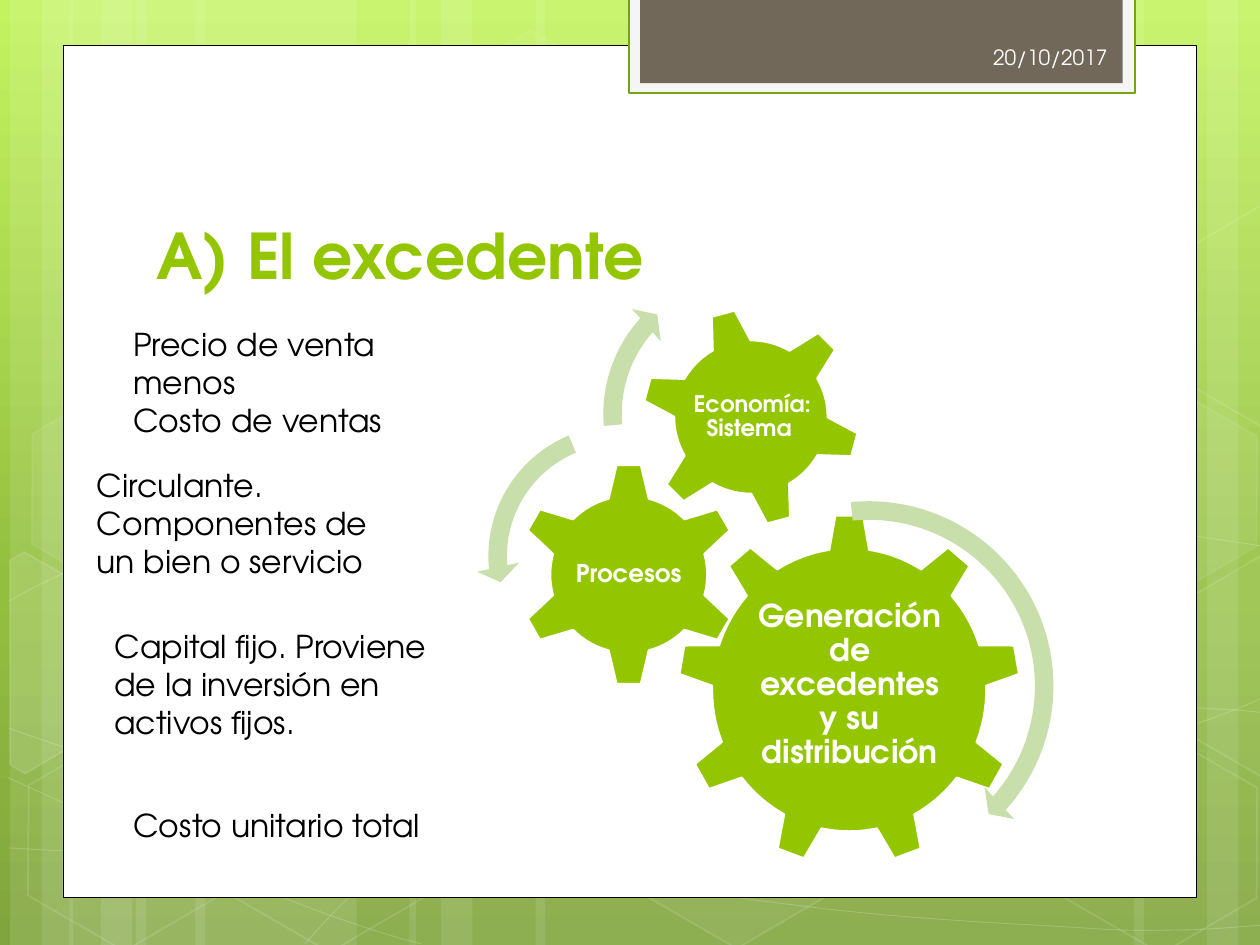
from copy import deepcopy
from dataclasses import dataclass
from lxml.etree import SubElement
from pptx import Presentation
from pptx.dml.color import RGBColor
from pptx.enum.shapes import MSO_SHAPE
from pptx.enum.text import MSO_ANCHOR, PP_ALIGN
from pptx.oxml.ns import qn
from pptx.util import Inches, Pt

FONT = "TeX Gyre Adventor"
WHITE = RGBColor(0xFF, 0xFF, 0xFF)
BLACK = RGBColor(0, 0, 0)
GREEN = RGBColor(0x94, 0xC6, 0x00)
PALE = RGBColor(0xC8, 0xDF, 0xAB)
EDGE = RGBColor(0x74, 0xA5, 0x10)
SMOKE = RGBColor(0xF5, 0xF5, 0xF5)
TAUPE = RGBColor(0x71, 0x68, 0x5A)
CREAM = RGBColor(0xFE, 0xFE, 0xFE)
SKY = [(0, RGBColor(0xC3, 0xF3, 0x5F)), (0.62, RGBColor(0x93, 0xBF, 0x3F)), (1, RGBColor(0x81, 0xA5, 0x3E))]
Box = tuple[float, float, float, float]
Points = list[tuple[float, float]]


@dataclass
class Gear:
    kind: MSO_SHAPE
    box: Box
    turn: float
    text: str
    label: Box
    size: float
    inset: float = 0.02


@dataclass
class Arrow:
    kind: MSO_SHAPE
    box: Box
    adjust: list[float]  # in hundredths


# Left and width of each light bar.
BARS = [(1.08, 1.75), (0.08, 0.5), (0.33, 0.83), (1.55, 1.75), (0.55, 0.5), (0.8, 0.83),
        (7.33, 1.75), (9.58, 0.5), (9, 0.83), (4.25, 3.08), (3.25, 0.5), (3.5, 0.83)]
# Each curve is a start point followed by triples of Bezier points.
CURVES = [
    [(0.07, 6.73), (0.61, 6.76), (1.15, 6.79), (1.9, 6.78), (2.65, 6.77), (3.58, 6.75), (4.58, 6.65),
     (5.58, 6.55), (7, 6.36), (7.92, 6.17), (8.83, 5.98), (9.77, 5.68), (10.07, 5.51)],
    [(0.07, 4.77), (0.36, 4.61), (0.65, 4.46), (1.21, 4.31), (1.78, 4.16), (2.59, 3.94), (3.47, 3.87),
     (4.36, 3.8), (5.44, 3.79), (6.54, 3.87), (7.64, 3.95), (9.47, 4.26), (10.07, 4.34)],
    [(0.06, 6.17), (1.27, 6.72), (2.47, 7.27), (3.34, 7.49)],
    [(0.07, 5.78), (0.38, 5.89), (0.7, 6), (1.28, 6.16), (1.86, 6.31), (2.73, 6.56), (3.57, 6.73),
     (4.4, 6.9), (5.45, 7.08), (6.28, 7.18), (7.11, 7.29), (8, 7.33), (8.53, 7.36),
     (9.05, 7.4), (9.19, 7.38), (9.45, 7.38), (9.71, 7.37), (9.89, 7.35), (10.07, 7.34)],
    [(2.42, 7.49), (2.6, 7.29), (2.78, 7.09), (3.02, 6.91), (3.26, 6.73), (3.6, 6.53), (3.88, 6.39),
     (4.16, 6.25), (4.33, 6.19), (4.7, 6.09), (5.06, 5.99), (5.73, 5.85), (6.08, 5.78),
     (6.44, 5.71), (6.49, 5.71), (6.8, 5.69), (7.11, 5.66), (7.6, 5.63), (7.94, 5.62),
     (8.29, 5.61), (8.86, 5.62), (8.86, 5.62), (9.08, 5.62), (9.3, 5.62), (9.53, 5.62),
     (9.71, 5.63), (9.88, 5.64), (9.97, 5.65), (10.06, 5.66), (10.03, 5.65), (10.06, 5.66)],
]
# Left, top, fill opacity and line opacity of each honeycomb cell.
CELLS = [(3.34, 0.36, 4, 8), (4.97, 5.89, 6, 12), (0.11, 5.91, 0, 12), (0.14, 3.12, 7, 8),
         (1.74, 5.92, 0, 12), (7.53, 4.53, 10, 12), (8.34, 5.93, 0, 12), (8.34, 3.14, 7, 8)]
# Cells cut off by the slide edge: corners and fill opacity.
CUTS = [
    ([(0.08, 4.45), (0.19, 4.38), (0.96, 4.82), (0.95, 5.7), (0.2, 6.14), (0.08, 6.07)], 10),
    ([(9.26, 4.85), (10.01, 4.41), (10.09, 4.46), (10.09, 6.13), (10.02, 6.17), (9.26, 5.73)], 4),
    ([(9.26, 2.07), (10.01, 1.63), (10.1, 1.68), (10.09, 3.35), (10.02, 3.39), (9.26, 2.95)], 0),
]
PANELS = [((0.5, 0.36, 9, 6.76), WHITE, BLACK, 0.5), ((4.99, -0.02, 4.02, 0.76), SMOKE, EDGE, 1.25),
          ((5.08, -0.02, 3.83, 0.68), TAUPE, None, 0)]
GEARS = [
    Gear(MSO_SHAPE.GEAR_9, (5.38, 4.08, 2.72, 2.79), 0, "Generación de excedentes y su distribución",
         (5.93, 4.72, 1.63, 1.44), 18, 0.03),
    Gear(MSO_SHAPE.GEAR_6, (4.1, 3.67, 1.78, 1.78), 0, "Procesos", (4.55, 4.12, 0.88, 0.88), 14),
    Gear(MSO_SHAPE.GEAR_6, (5.09, 2.44, 1.74, 1.74), 345, "Economía: Sistema ", (5.48, 2.82, 0.98, 0.98), 13),
]
ARROWS = [
    Arrow(MSO_SHAPE.CIRCULAR_ARROW, (5.33, 3.88, 3.13, 3.13), [4.7, 299, 2513.1, 15867.9, 5.5]),
    Arrow(MSO_SHAPE.LEFT_CIRCULAR_ARROW, (3.78, 3.28, 2.27, 2.27), [6.5, 430, 10489.1, 14837.8, 7.5]),
    Arrow(MSO_SHAPE.CIRCULAR_ARROW, (4.69, 2.06, 2.45, 2.45), [6, 394.1, 13313.8, 10508.2, 7]),
]
NOTES = [
    ((0.96, 2.53, 2.36, 1.01), "Precio de venta menos\nCosto de ventas"),
    ((0.67, 3.65, 2.52, 1.01), "Circulante. Componentes de un bien o servicio"),
    ((0.81, 4.93, 2.68, 1.31), "Capital fijo. Proviene de la inversión en activos fijos."),
    ((0.96, 6.35, 3.09, 0.4), "Costo unitario total"),
]


def fade(part, percent: int) -> None:
    """Set the opacity of a solid fill's colour."""
    tone = part.find(qn("a:solidFill")).find(qn("a:srgbClr"))
    SubElement(tone, qn("a:alpha")).set("val", str(percent * 1000))


def paint(shape, fill=None, line=None, width=1.0, clear=100, faint=100) -> None:
    """Style a shape; clear and faint are the fill and line opacities."""
    shape.shadow.inherit = False
    shape.fill.background()
    shape.line.fill.background()
    if fill is not None and clear:
        shape.fill.solid()
        shape.fill.fore_color.rgb = fill
        if clear < 100:
            fade(shape.element.spPr, clear)
    if line is not None:
        shape.line.color.rgb = line
        shape.line.width = Pt(width)
        if faint < 100:
            fade(shape.element.spPr.find(qn("a:ln")), faint)


def place(slide, kind: MSO_SHAPE, box: Box):
    return slide.shapes.add_shape(kind, *map(Inches, box))


def trace(slide, points: Points, close: bool):
    start, *rest = [(Inches(x), Inches(y)) for x, y in points]
    pen = slide.shapes.build_freeform(*start)
    pen.add_line_segments(rest, close=close)
    return pen.convert_to_shape()


def bend(slide, points: Points):
    """Trace the anchor points, then turn each sloping step into a Bezier curve."""
    shape = trace(slide, points[::3], False)
    for i, step in enumerate(shape.element.findall(".//" + qn("a:lnTo"))):
        part = points[3 * i:3 * i + 4]
        if len({y for _, y in part}) == 1:
            continue
        step.addprevious(curve := step.makeelement(qn("a:cubicBezTo")))
        step.getparent().remove(step)
        for x, y in part[1:]:
            spot = SubElement(curve, qn("a:pt"))
            spot.set("x", str(Inches(x) - shape.left))
            spot.set("y", str(Inches(y) - shape.top))
    return shape


def write(frame, text: str, size: float, tone: RGBColor, bold=False,
          align=PP_ALIGN.LEFT, anchor=MSO_ANCHOR.TOP) -> None:
    frame.text = text
    frame.word_wrap = True
    frame.vertical_anchor = anchor
    for para in frame.paragraphs:
        para.alignment = align
        for run in para.runs:
            run.font.name, run.font.size, run.font.bold = FONT, Pt(size), bold
            run.font.color.rgb = tone


def label(slide, box: Box):
    return slide.shapes.add_textbox(*map(Inches, box)).text_frame


def scene(slide) -> None:
    """Draw the gradient, bars, curves, honeycomb and panels."""
    fill = slide.background.fill
    fill.gradient()
    fill.gradient_angle = 270
    stops = slide.element.find(".//" + qn("a:gsLst"))
    stops.append(deepcopy(stops[-1]))
    for stop, (spot, tone) in zip(fill.gradient_stops, SKY):
        stop.position, stop.color.rgb = spot, tone
    for left, width in BARS:
        paint(place(slide, MSO_SHAPE.RECTANGLE, (left, 0, width, 7.5)), WHITE, clear=10)
    for curve in CURVES:
        paint(bend(slide, curve), line=WHITE, width=0.5, faint=20)
    for left, top, clear, faint in CELLS:
        cell = place(slide, MSO_SHAPE.HEXAGON, (left, top, 1.75, 1.52))
        cell.adjustments[0], cell.rotation = 0.285, 30
        paint(cell, WHITE, WHITE, 1, clear, faint)
    for points, clear in CUTS:
        paint(trace(slide, points, True), WHITE, WHITE, 1, clear, 12)
    for box, *style in PANELS:
        paint(place(slide, MSO_SHAPE.RECTANGLE, box), *style)


def main() -> None:
    deck = Presentation()
    deck.slide_width, deck.slide_height = Inches(10), Inches(7.5)
    slide = deck.slides.add_slide(deck.slide_layouts[5])
    scene(slide)
    title = slide.shapes.title
    title.left, title.top, title.width, title.height = map(Inches, (1.14, 1.12, 7.68, 1.25))
    write(title.text_frame, "A) El excedente", 36, GREEN, True, anchor=MSO_ANCHOR.BOTTOM)
    slide.shapes.element.append(title.element)  # in front of the panel
    date = label(slide, (6.56, 0.25, 2.33, 0.4))
    write(date, "20/10/2017", 12, CREAM, align=PP_ALIGN.RIGHT, anchor=MSO_ANCHOR.MIDDLE)
    for gear in GEARS:
        wheel = place(slide, gear.kind, gear.box)
        wheel.rotation = gear.turn
        paint(wheel, GREEN, WHITE, 1.25)
        frame = label(slide, gear.label)
        frame.margin_left = frame.margin_right = Inches(gear.inset)
        frame.margin_top = frame.margin_bottom = Inches(gear.inset)
        write(frame, gear.text, gear.size, WHITE, True, PP_ALIGN.CENTER, MSO_ANCHOR.MIDDLE)
        frame.paragraphs[0].line_spacing = 0.9
    for arrow in ARROWS:
        shape = place(slide, arrow.kind, arrow.box)
        for i, value in enumerate(arrow.adjust):
            shape.adjustments[i] = value / 100
        paint(shape, PALE)
    for box, text in NOTES:
        write(label(slide, box), text, 18, BLACK)
    deck.save("out.pptx")


if __name__ == "__main__":
    main()
